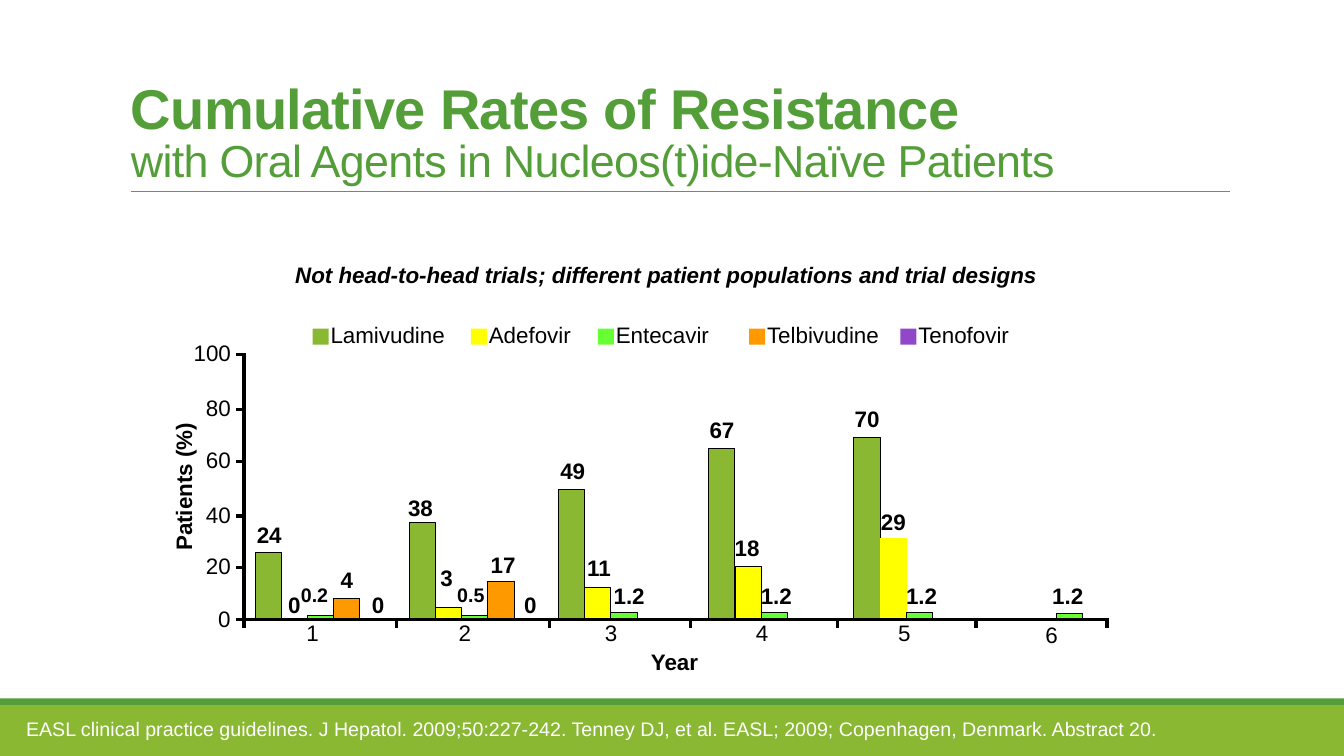
"""Build the slide on cumulative resistance rates with oral agents."""
import pptx
import pptx.util
import pptx.dml.color
import pptx.enum.shapes
import pptx.enum.text
import pptx.oxml
import pptx.oxml.ns

RGBColor = pptx.dml.color.RGBColor
Pt = pptx.util.Pt
ALIGN = pptx.enum.text.PP_ALIGN
ANCHOR = pptx.enum.text.MSO_ANCHOR
BLACK = RGBColor(0x00, 0x00, 0x00)
WHITE = RGBColor(0xFF, 0xFF, 0xFF)
GREY = RGBColor(0x80, 0x80, 0x80)
DARK_GREEN = RGBColor(0x54, 0x9E, 0x39)
OLIVE = RGBColor(0x8A, 0xB8, 0x33)
YELLOW = RGBColor(0xFF, 0xFF, 0x00)
LIME = RGBColor(0x66, 0xFF, 0x33)
ORANGE = RGBColor(0xFF, 0x99, 0x00)
PURPLE = RGBColor(0x91, 0x48, 0xC8)

deck = pptx.Presentation()
deck.slide_width = pptx.util.Inches(13.33)
deck.slide_height = pptx.util.Inches(7.5)
column, row = deck.slide_width / 1333, deck.slide_height / 750
slide = deck.slides.add_slide(deck.slide_layouts[6])


def cells(left, top, width, height):
    """Turn columns and rows of the grid into lengths."""
    return int(left * column), int(top * row), int(width * column), int(height * row)


def add_text(text, area, size=16, color=BLACK, bold=False, italic=False, spacing=0.9,
             align=ALIGN.LEFT, anchor=ANCHOR.TOP, wrap=True):
    """Write one paragraph in a box and return the box."""
    box = slide.shapes.add_textbox(*cells(*area))
    frame = box.text_frame
    frame.word_wrap = wrap
    frame.vertical_anchor = anchor
    paragraph = frame.paragraphs[0]
    paragraph.line_spacing, paragraph.alignment = spacing, align
    run = paragraph.add_run()
    run.text = text
    font = run.font
    font.name, font.size, font.bold, font.italic = "Arial", Pt(size), bold, italic
    font.color.rgb = color
    return box


BASELINE, AXIS_LEFT, BAR_WIDTH = 615, 242, 26
agents = (("Lamivudine", OLIVE, 310, 134), ("Adefovir", YELLOW, 467, 102),
          ("Entecavir", LIME, 593, 113), ("Telbivudine", ORANGE, 743, 133),
          ("Tenofovir", PURPLE, 893, 113))

# Each year: first bar, number position, and (agent, rate, bar height, label centre, label top).
years = (
    (253, 310, 612, ((0, "24", 67, 267, 515), (1, "0", 0, 292, 585), (2, "0.2", 4, 312, 576),
                     (3, "4", 21, 344, 560), (4, "0", 0, 375, 585))),
    (406, 461, 612, ((0, "38", 97, 417, 488), (1, "3", 12, 443, 558), (2, "0.5", 4, 467, 576),
                     (3, "17", 38, 499, 545), (4, "0", 0, 526, 585))),
    (554, 606, 612, ((0, "49", 129, 568, 452), (1, "11", 32, 594, 548),
                     (2, "1.2", 7, 624, 576))),
    (703, 756, 612, ((0, "67", 170, 716, 411), (1, "18", 53, 741, 528),
                     (2, "1.2", 7, 770, 576))),
    (847, 897, 612, ((0, "70", 181, 860, 400), (1, "29", 81, 886, 502),
                     (2, "1.2", 7, 914, 576))),
    (996, 1043, 614, ((2, "1.2", 6, 1059, 576),)),
)

blocks = [((0, 700, 1333, 50), OLIVE, None), ((0, 693, 1333, 7), DARK_GREEN, None)]
labels = []
for first_bar, number_center, number_top, rates in years:
    for agent, rate, height, center, top in rates:
        if height:
            color = agents[agent][1]
            outline = YELLOW if rate == "29" else BLACK
            bar_left = first_bar + agent * BAR_WIDTH
            blocks.append(((bar_left, BASELINE - height, BAR_WIDTH, height), color, outline))
        labels.append((rate, center, top, 14 if rate in ("0.2", "0.5") else 16, True))
    number = str(years.index((first_bar, number_center, number_top, rates)) + 1)
    labels.append((number, number_center, number_top, 16, False))
for agent, color, left, width in agents:
    blocks.append(((left, 326, 16, 16), color, None))

for area, color, outline in blocks:
    block = slide.shapes.add_shape(pptx.enum.shapes.MSO_SHAPE.RECTANGLE, *cells(*area))
    block.shadow.inherit = False
    block.fill.solid()
    block.fill.fore_color.rgb = color
    if outline is None:
        block.line.fill.background()
    else:
        block.line.color.rgb = outline
        block.line.width = Pt(0.75)

lines = [((130, 190, 1220, 190), GREY, 0.5),
         ((AXIS_LEFT, 616, AXIS_LEFT, 350), BLACK, 2.25),
         ((AXIS_LEFT, BASELINE, 1100, BASELINE), BLACK, 2.25)]
for year_edge in (AXIS_LEFT, 393, 545, 685, 831, 968, 1098):
    lines.append(((year_edge, 623, year_edge, 616), BLACK, 2.25))
for percent, level in zip(range(0, 101, 20), (615, 563, 512, 458, 406, 352)):
    lines.append(((241, level, 234, level), BLACK, 2.25))
    width = 21 + 12 * len(str(percent))
    labels.append((str(percent), 239 - width / 2, level - 17, 16, False))

for ends, color, weight in lines:
    line = slide.shapes.add_connector(pptx.enum.shapes.MSO_CONNECTOR.STRAIGHT, *cells(*ends))
    line.line.color.rgb = color
    line.line.width = Pt(weight)
    line._element.spPr.append(pptx.oxml.parse_xml(
        f'<a:effectLst {pptx.oxml.ns.nsdecls("a")}/>'))

for text, center, top, size, bold in labels:
    width = 21 + 12 * len(text.replace(".", "")) + 6 * text.count(".")
    add_text(text, (center - width / 2, top, width, 34), size=size, bold=bold,
             align=ALIGN.CENTER, wrap=False)
for agent, color, left, width in agents:
    add_text(agent, (left + 8, 317, width, 34), wrap=False)

add_text("Year", (240, 641, 858, 34), bold=True, align=ALIGN.CENTER)
patients = add_text("Patients (%)", (48, 466, 271, 34), bold=True, align=ALIGN.CENTER)
patients.rotation = 270

title = add_text("Cumulative Rates of Resistance", (120, 31, 1100, 159), size=40,
                 color=DARK_GREEN, bold=True, spacing=0.85, anchor=ANCHOR.BOTTOM)
headline = title.text_frame.paragraphs[0]
headline.add_line_break()
subhead = headline.add_run()
subhead.text = "with Oral Agents in Nucleos(t)ide-Naïve Patients"
subhead.font.name, subhead.font.size = "Arial", Pt(32)
subhead.font.color.rgb = DARK_GREEN
for run in headline.runs:
    run._r.get_or_add_rPr().set("spc", "-50")

add_text("Not head-to-head trials; different patient populations and trial designs",
         (283, 257, 767, 35), bold=True, italic=True)
add_text("EASL clinical practice guidelines. J Hepatol. 2009;50:227-242. "
         "Tenney DJ, et al. EASL; 2009; Copenhagen, Denmark. Abstract 20.",
         (16, 706, 1209, 34), size=14, color=WHITE, spacing=1, anchor=ANCHOR.MIDDLE)

deck.save("out.pptx")
